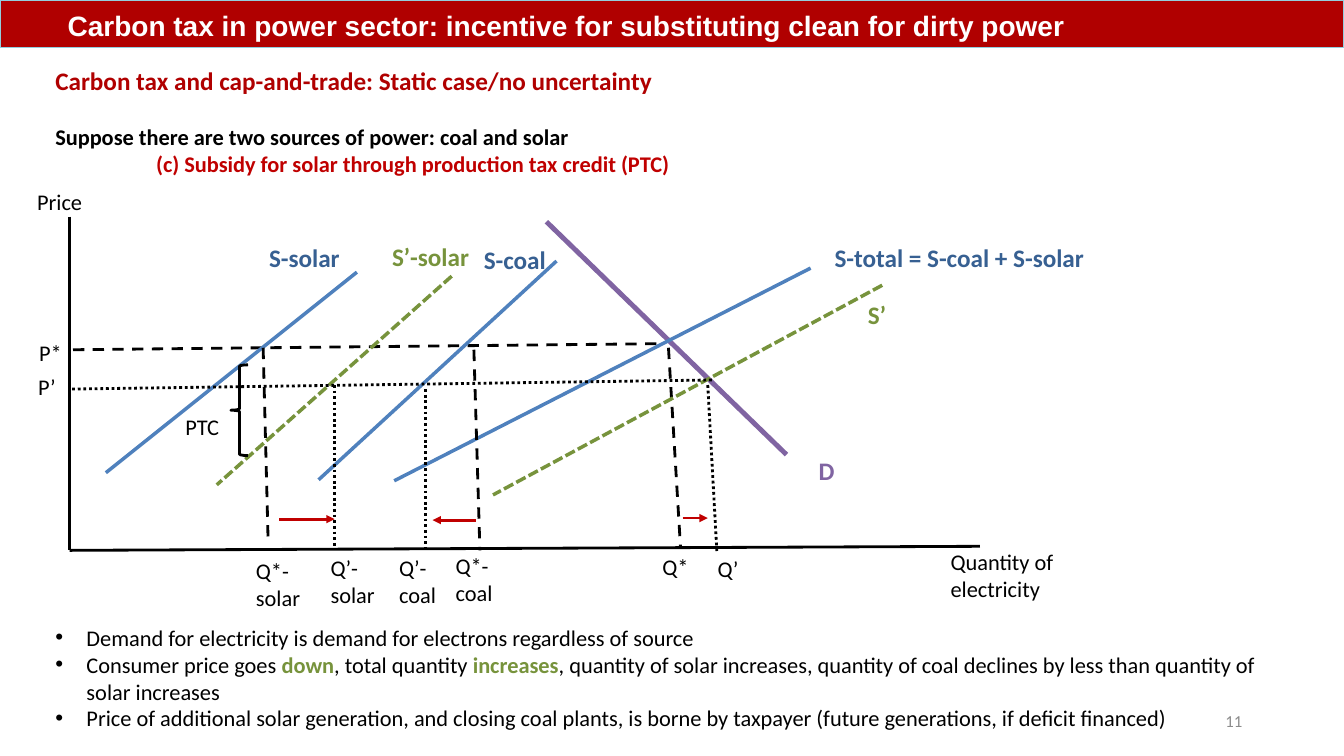
"""Build a slide on a production tax credit for solar in the power market."""
from lxml.etree import SubElement
from pptx import Presentation
from pptx.dml.color import RGBColor
from pptx.enum.dml import MSO_LINE
from pptx.enum.shapes import MSO_CONNECTOR, MSO_SHAPE
from pptx.enum.text import MSO_ANCHOR, MSO_AUTO_SIZE, PP_ALIGN
from pptx.oxml.ns import qn
from pptx.util import Pt

PX = 9144
BLACK, WHITE, GREY = "000000", "FFFFFF", "8C8C8C"
BANNER, RED, GREEN = "B00000", "C00000", "77933C"
BLUE, NAVY, PURPLE = "4F81BD", "376092", "8064A2"
DASH, GREEN_DASH, DOT = MSO_LINE.DASH, MSO_LINE.SQUARE_DOT, MSO_LINE.ROUND_DOT

LINES = [
    (542, 220, 780, 451, PURPLE, 3.5, None),
    (663, 345, 675, 544, BLACK, 2, DASH),
    (651, 341, 72, 347, BLACK, 2, DASH),
    (552, 259, 316, 476, BLUE, 2.5, None),
    (69, 215, 69, 546, BLACK, 2, None),
    (972, 542, 69, 546, BLACK, 2, None),
    (354, 270, 105, 469, BLUE, 2.5, None),
    (804, 266, 391, 477, BLUE, 2.5, None),
    (470, 347, 476, 546, BLACK, 2, DASH),
    (261, 345, 266, 539, BLACK, 2, DASH),
    (448, 274, 215, 481, GREEN, 2.5, GREEN_DASH),
    (875, 283, 489, 491, GREEN, 2.5, GREEN_DASH),
    (706, 377, 71, 386, BLACK, 2, DOT),
    (702, 382, 711, 547, BLACK, 2, DOT),
    (332, 382, 332, 543, BLACK, 2, DOT),
    (422, 386, 422, 545, BLACK, 2, DOT),
]
SHIFT_ARROWS = [(277, 332, 515), (472, 429, 516), (677, 702, 514)]
CURVE_LABELS = [
    ("D", 802, 447, 127, PURPLE),
    ("S-coal", 470, 237, 100, NAVY),
    ("S-total = S-coal + S-solar", 818, 236, 273, NAVY),
    ("S-solar", 257, 236, 100, NAVY),
    ("S’", 851, 292, 90, GREEN),
    ("S’-solar", 379, 234, 100, GREEN),
]
AXIS_LABELS = [
    ("Quantity of electricity", 933, 539, 204, 64),
    ("Price", 27, 182, 87, 37),
    ("Q*", 647, 544, 55, 37),
    ("P*", 29, 332, 64, 37),
    ("Q*-coal", 442, 543, 69, 64),
    ("Q*-solar", 244, 548, 72, 64),
    ("PTC", 174, 405, 82, 37),
    ("P’", 28, 365, 64, 37),
    ("Q’", 702, 546, 55, 37),
    ("Q’-solar", 318, 545, 72, 64),
    ("Q’-coal", 386, 545, 72, 64),
]
HEADINGS = [
    ("Carbon tax and cap-and-trade: Static case/no uncertainty", 18, BANNER, 0, 0),
    ("Suppose there are two sources of power: coal and solar", 16, BLACK, 19.5, 0),
    ("(c) Subsidy for solar through production tax credit (PTC)", 16, RED, 0, 100),
]
BULLETS = [
    [("Demand for electricity is demand for electrons regardless of source", False)],
    [("Consumer price goes ", False), ("down", True), (", total quantity ", False),
     ("increases", True),
     (", quantity of solar increases, quantity of coal declines by less than "
      "quantity of solar increases", False)],
    [("Price of additional solar generation, and closing coal plants, is borne by "
      "taxpayer (future generations, if deficit financed)", False)],
]


def color(hex_string):
    """Return the colour for a hex string."""
    return RGBColor.from_string(hex_string)


def style(span, size, hex_string, bold=False, font="Calibri"):
    """Format one run of text."""
    span.font.name = font
    span.font.size = Pt(size)
    span.font.bold = bold
    span.font.color.rgb = color(hex_string)


def place(shape, left, top, width, height):
    """Move and size a shape in px."""
    shape.left, shape.top = left * PX, top * PX
    shape.width, shape.height = width * PX, height * PX


def indent(para, margin, hanging=0):
    """Set the left margin and hanging indent of a paragraph in px."""
    properties = para._p.get_or_add_pPr()
    properties.set("marL", str(margin * PX))
    properties.set("indent", str(-hanging * PX))
    return properties


def add_box(slide, left, top, width, height, wrap=True):
    """Add an empty text box and return its text frame."""
    box = slide.shapes.add_textbox(left * PX, top * PX, width * PX, height * PX)
    box.text_frame.word_wrap = wrap
    return box.text_frame


def add_label(slide, text, left, top, width, height, size, hex_string, bold=False):
    """Add a text box with one formatted paragraph and return its frame."""
    frame = add_box(slide, left, top, width, height)
    frame.text = text
    style(frame.paragraphs[0].runs[0], size, hex_string, bold)
    return frame


def add_line(slide, x1, y1, x2, y2, hex_string, weight, dash=None, arrow=False):
    """Draw a straight line, optionally dashed or with an arrowhead."""
    connector = slide.shapes.add_connector(
        MSO_CONNECTOR.STRAIGHT, x1 * PX, y1 * PX, x2 * PX, y2 * PX)
    connector.line.color.rgb = color(hex_string)
    connector.line.width = Pt(weight)
    if dash is not None:
        connector.line.dash_style = dash
    if arrow:
        SubElement(connector.line._get_or_add_ln(), qn("a:tailEnd"), type="triangle")
    SubElement(connector._element.spPr, qn("a:effectLst"))


def add_brace(slide, left, top, width, height):
    """Draw the brace that marks the size of the credit."""
    brace = slide.shapes.add_shape(
        MSO_SHAPE.LEFT_BRACE, left * PX, top * PX, width * PX, height * PX)
    brace.shadow.inherit = False
    brace.fill.background()
    brace.line.color.rgb = color(BLACK)
    brace.line.width = Pt(2)


def format_title(title, text):
    """Turn the title placeholder into the banner."""
    place(title, 0, 0, 1333, 47)
    title.fill.solid()
    title.fill.fore_color.rgb = color(BANNER)
    title.line.color.rgb = color("93CDDD")
    title.line.width = 0
    frame = title.text_frame
    frame.text = text
    frame.auto_size = MSO_AUTO_SIZE.NONE
    frame.vertical_anchor = MSO_ANCHOR.BOTTOM
    frame.margin_left = 67 * PX
    frame.paragraphs[0].alignment = PP_ALIGN.LEFT
    style(frame.paragraphs[0].runs[0], 20, WHITE, True, "Arial")


def add_headings(slide):
    """Add the heading lines above the diagram."""
    frame = add_box(slide, 45, 60, 677, 121, wrap=False)
    for number, (text, size, hex_string, gap, margin) in enumerate(HEADINGS):
        para = frame.add_paragraph() if number else frame.paragraphs[0]
        para.text = text
        para.space_before = Pt(gap)
        indent(para, margin)
        style(para.runs[0], size, hex_string, True)


def add_bullets(slide):
    """Add the bulleted conclusions with their green key words."""
    frame = add_box(slide, 45, 614, 1224, 118)
    for number, spans in enumerate(BULLETS):
        para = frame.add_paragraph() if number else frame.paragraphs[0]
        properties = indent(para, 31, 31)
        SubElement(properties, qn("a:buFont"), typeface="Arial")
        SubElement(properties, qn("a:buChar"), char="•")
        for text, is_key in spans:
            span = para.add_run()
            span.text = text
            style(span, 16, GREEN if is_key else BLACK, is_key)


def main():
    """Build and save the deck."""
    deck = Presentation()
    deck.slide_width, deck.slide_height = 1333 * PX, 750 * PX
    slide = deck.slides.add_slide(deck.slide_layouts[5])
    format_title(slide.shapes.title,
                 "Carbon tax in power sector: incentive for substituting clean for dirty power")
    add_headings(slide)
    for line in LINES:
        add_line(slide, *line)
    for start, end, level in SHIFT_ARROWS:
        add_line(slide, start, level, end, level, RED, 2, arrow=True)
    add_brace(slide, 229, 362, 17, 90)
    for text, left, top, width, hex_string in CURVE_LABELS:
        add_label(slide, text, left, top, width, 40, 18, hex_string, True)
    for label in AXIS_LABELS:
        add_label(slide, *label, 16, BLACK)
    add_bullets(slide)
    page_number = add_label(slide, "11", 942, 695, 300, 40, 12, GREY)
    page_number.vertical_anchor = MSO_ANCHOR.MIDDLE
    page_number.paragraphs[0].alignment = PP_ALIGN.RIGHT
    deck.save("out.pptx")


if __name__ == "__main__":
    main()
